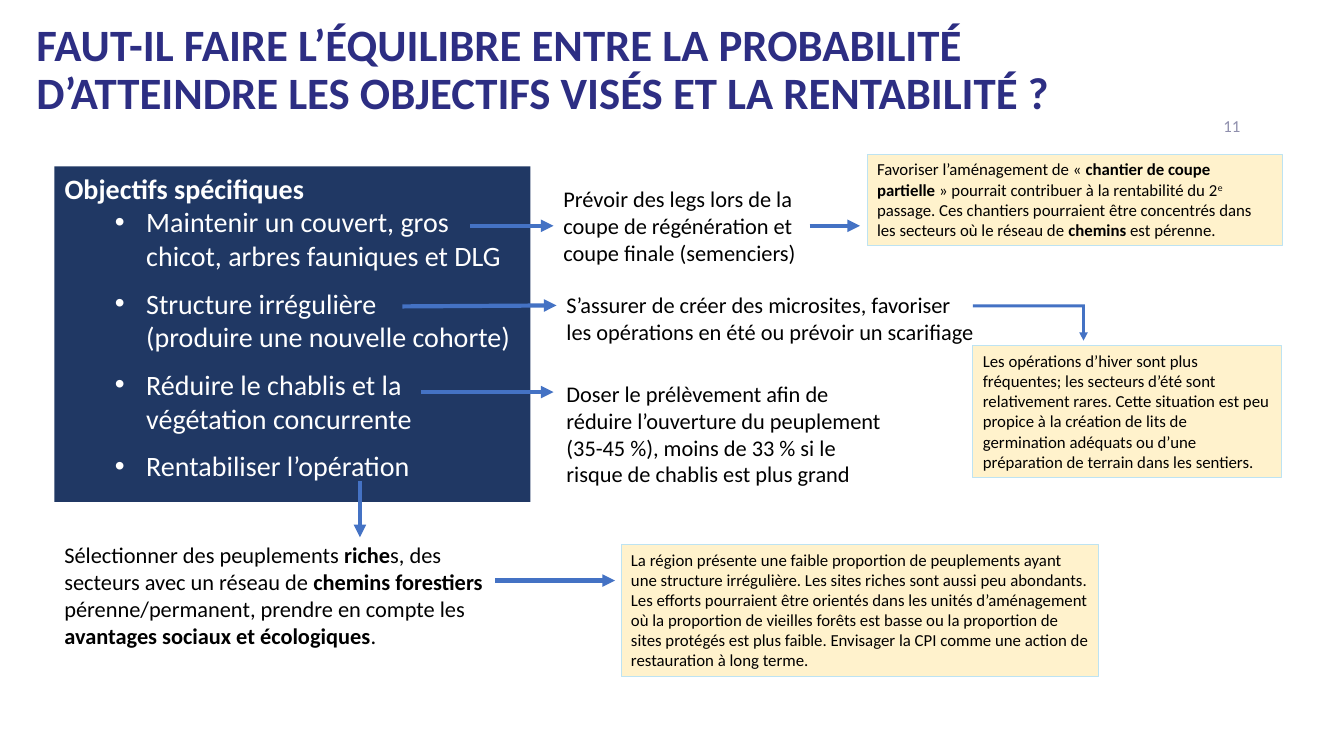
from lxml import etree
from pptx import Presentation
from pptx.dml.color import RGBColor
from pptx.enum.shapes import MSO_CONNECTOR, MSO_SHAPE
from pptx.enum.text import MSO_ANCHOR, MSO_AUTO_SIZE, PP_ALIGN
from pptx.oxml.ns import qn
from pptx.util import Pt

RECTANGLE, BENT_ARROW = MSO_SHAPE.RECTANGLE, MSO_SHAPE.BENT_UP_ARROW
STRAIGHT = MSO_CONNECTOR.STRAIGHT
TOP, MIDDLE = MSO_ANCHOR.TOP, MSO_ANCHOR.MIDDLE
LEFT, RIGHT = PP_ALIGN.LEFT, PP_ALIGN.RIGHT
NO_AUTOFIT, GROW = MSO_AUTO_SIZE.NONE, MSO_AUTO_SIZE.SHAPE_TO_FIT_TEXT

PX = 9144
THEME = {
    "font": "Calibri",
    "title": RGBColor(0x2D, 0x2E, 0x83),
    "number": RGBColor(0x8F, 0x8F, 0xAD),
    "navy": RGBColor(0x20, 0x38, 0x64),
    "white": RGBColor(0xFF, 0xFF, 0xFF),
    "black": RGBColor(0, 0, 0),
    "arrow": RGBColor(0x44, 0x72, 0xC4),
    "note": RGBColor(0xFF, 0xF2, 0xCC),
    "note_line": RGBColor(0xBD, 0xE3, 0xF2),
    "title_size": Pt(32),
    "list_size": Pt(20),
    "measure_size": Pt(16),
    "note_size": Pt(12),
}


def place(shape, left, top, width, height):
    shape.left, shape.top = left * PX, top * PX
    shape.width, shape.height = width * PX, height * PX


def style_run(run, size, color, bold=False):
    run.font.name = THEME["font"]
    run.font.size = THEME[size]
    run.font.color.rgb = THEME[color]
    run.font.bold = bold


presentation = Presentation()
presentation.slide_width, presentation.slide_height = 1333 * PX, 750 * PX
slide = presentation.slides.add_slide(presentation.slide_layouts[1])
title, objectives = slide.placeholders

place(title, 26, 15, 1047, 111)
title.text_frame.text = "FAUT-IL FAIRE L’ÉQUILIBRE ENTRE LA PROBABILITÉ D’ATTEINDRE LES OBJECTIFS VISÉS ET LA RENTABILITÉ ?"
title.text_frame.auto_size = NO_AUTOFIT
title.text_frame.vertical_anchor = MIDDLE
title_line = title.text_frame.paragraphs[0]
title_line.alignment = LEFT
title_line.line_spacing = 0.9
style_run(title_line.runs[0], "title_size", "title", True)

place(objectives, 54, 165, 472, 333)
objectives.fill.solid()
objectives.fill.fore_color.rgb = THEME["navy"]
objectives.text_frame.text = "\n".join([
    "Objectifs spécifiques",
    "Maintenir un couvert, gros chicot, arbres fauniques et DLG",
    "Structure irrégulière\v(produire une nouvelle cohorte)",
    "Réduire le chablis et la végétation concurrente",
    "Rentabiliser l’opération",
])
objectives.text_frame.auto_size = NO_AUTOFIT
objectives.text_frame.vertical_anchor = TOP
for index, objective in enumerate(objectives.text_frame.paragraphs):
    is_heading = index == 0
    objective.level = 0 if is_heading else 1
    objective.space_before = Pt(10 if index > 1 else 0)
    properties = objective._p.get_or_add_pPr()
    properties.set("marL", str(0 if is_heading else 81 * PX))
    properties.set("indent", str(0 if is_heading else -31 * PX))
    if is_heading:
        etree.SubElement(properties, qn("a:buNone"))
    else:
        etree.SubElement(properties, qn("a:buFont")).set("typeface", "Arial")
        etree.SubElement(properties, qn("a:buChar")).set("char", "•")
    for run in objective.runs:
        style_run(run, "list_size", "white", is_heading)

page_number = slide.shapes.add_textbox(940 * PX, 105 * PX, 300 * PX, 40 * PX)
page_number.text_frame.text = "11"
page_number.text_frame.word_wrap = True
page_number.text_frame.vertical_anchor = MIDDLE
page_number.text_frame.paragraphs[0].alignment = RIGHT
style_run(page_number.text_frame.paragraphs[0].runs[0], "note_size", "number")

notes = [
    ((860, 153, 412, 91), [
        ("Favoriser l’aménagement de « ", ""),
        ("chantier de coupe partielle", "bold"),
        (" » pourrait contribuer à la rentabilité du 2", ""),
        ("e", "superscript"),
        (" passage. Ces chantiers pourraient être concentrés dans les secteurs où le réseau de ", ""),
        ("chemins", "bold"),
        (" est pérenne.", ""),
    ]),
    ((965, 343, 306, 131), [
        ("Les opérations d’hiver sont plus fréquentes; les secteurs d’été sont relativement rares. "
         "Cette situation est peu propice à la création de lits de germination adéquats ou d’une "
         "préparation de terrain dans les sentiers.", ""),
    ]),
    ((616, 540, 474, 131), [
        ("La région présente une faible proportion de peuplements ayant une structure irrégulière. "
         "Les sites riches sont aussi peu abondants. Les efforts pourraient être orientés dans les "
         "unités d’aménagement où la proportion de vieilles forêts est basse ou la proportion de "
         "sites protégés est plus faible. Envisager la CPI comme une action de restauration à long "
         "terme.", ""),
    ]),
]
measures = [
    ((549, 179, 254, 90), [
        ("Prévoir des legs lors de la coupe de régénération et coupe finale (semenciers)", ""),
    ]),
    ((552, 284, 427, 64), [
        ("S’assurer de créer des microsites, favoriser les opérations en été ou prévoir un scarifiage", ""),
    ]),
    ((552, 372, 337, 118), [
        ("Doser le prélèvement afin de réduire l’ouverture du peuplement (35-45 %), moins de 33 % "
         "si le risque de chablis est plus grand", ""),
    ]),
    ((54, 532, 438, 118), [
        ("Sélectionner des peuplements ", ""),
        ("riche", "bold"),
        ("s, des secteurs avec un réseau de ", ""),
        ("chemins forestiers ", "bold"),
        ("pérenne/permanent, prendre en compte les ", ""),
        ("avantages sociaux et écologiques", "bold"),
        (".", ""),
    ]),
]
measure_boxes = []
for size, entries in (("note_size", notes), ("measure_size", measures)):
    for bounds, segments in entries:
        emu_bounds = [length * PX for length in bounds]
        if size == "note_size":
            box = slide.shapes.add_shape(RECTANGLE, *emu_bounds)
            box.shadow.inherit = False
            box.fill.solid()
            box.fill.fore_color.rgb = THEME["note"]
            box.line.color.rgb = THEME["note_line"]
            box.line.width = Pt(0.75)
        else:
            box = slide.shapes.add_textbox(*emu_bounds)
            measure_boxes.append(box)
        box.text_frame.word_wrap = True
        box.text_frame.auto_size = GROW
        box.text_frame.vertical_anchor = TOP
        paragraph = box.text_frame.paragraphs[0]
        paragraph.alignment = LEFT
        for text, emphasis in segments:
            run = paragraph.add_run()
            run.text = text
            style_run(run, size, "black", emphasis == "bold")
            if emphasis == "superscript":
                run.font._element.set("baseline", "30000")

seed_trees = measure_boxes[0]
arrows = [
    ((466, 224, 549, 224), None, seed_trees),
    ((803, 224, 853, 224), seed_trees, None),
    ((399, 304, 552, 303), None, None),
    ((418, 389, 549, 389), None, None),
    ((357, 477, 357, 533), None, None),
    ((491, 576, 610, 576), None, None),
]
for ends, source, target in arrows:
    arrow = slide.shapes.add_connector(STRAIGHT, *[length * PX for length in ends])
    if source:
        arrow.begin_connect(source, 3)
    if target:
        arrow.end_connect(target, 1)
    arrow.line.color.rgb = THEME["arrow"]
    arrow.line.width = Pt(3)
    outline = arrow._element.spPr.find(qn("a:ln"))
    etree.SubElement(outline, qn("a:tailEnd")).set("type", "triangle")
    etree.SubElement(arrow._element.spPr, qn("a:effectLst"))

winter_arrow = slide.shapes.add_shape(BENT_ARROW, 965 * PX, 302 * PX, 114 * PX, 36 * PX)
winter_arrow.shadow.inherit = False
winter_arrow.fill.solid()
winter_arrow.fill.fore_color.rgb = THEME["arrow"]
winter_arrow.line.fill.background()
for index, ratio in enumerate((0.08, 0.12, 0.23)):
    winter_arrow.adjustments[index] = ratio
winter_arrow._element.spPr.find(qn("a:xfrm")).set("flipV", "1")

presentation.save("out.pptx")
